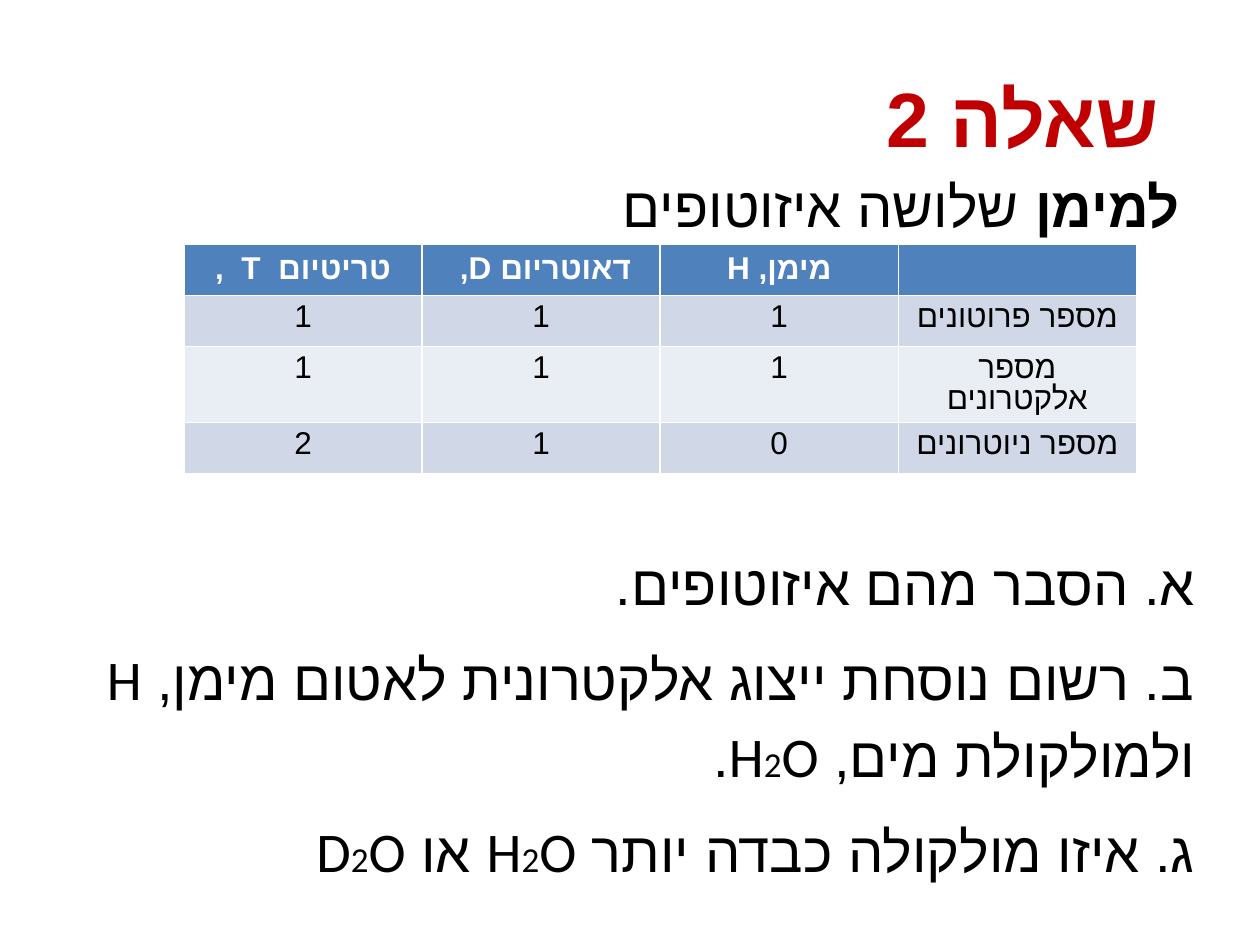
from dataclasses import dataclass

from pptx import Presentation
from pptx.dml.color import RGBColor
from pptx.enum.text import MSO_ANCHOR, MSO_AUTO_SIZE, PP_ALIGN
from pptx.oxml.ns import qn
from pptx.util import Inches, Pt

# Positions are given in columns and rows of a grid over the slide
UNIT = Inches(0.1)
COLUMNS, ROWS = 100, 75


@dataclass(frozen=True)
class Theme:
    text_font: str = "Calibri"
    hebrew_font: str = "Arial"
    title_color: str = "C00000"
    text_color: str = "000000"
    header_text: str = "FFFFFF"
    header_fill: str = "4F81BD"
    band_fills: tuple = ("D0D8E8", "E9EDF4")
    title_size: int = 44
    body_size: int = 32
    subscript_size: int = 20
    table_size: int = 18


THEME = Theme()

ISOTOPES = [
    ["טריטיום  T  ,", "דאוטריום D, ", "מימן, H", ""],
    ["1", "1", "1", "מספר פרוטונים"],
    ["1", "1", "1", "מספר אלקטרונים"],
    ["2", "1", "0", "מספר ניוטרונים"],
]

# Each question is a list of spans; a span "2" is a small formula index
QUESTIONS = [
    ["א. הסבר מהם איזוטופים. "],
    ["ב. רשום נוסחת ייצוג אלקטרונית לאטום מימן, H ולמולקולת מים, H", "2", "O."],
    ["ג. איזו מולקולה כבדה יותר H", "2", "O או D", "2", "O"],
]


def grid(*lengths):
    return [round(length * UNIT) for length in lengths]


def place(box, left, top, width, height):
    box.left, box.top, box.width, box.height = grid(left, top, width, height)


def add_span(para, text, *, size, color=THEME.text_color, bold=False,
             font=THEME.text_font):
    span = para.add_run()
    span.text = text
    span.font.size = Pt(size)
    span.font.bold = bold
    span.font.name = font
    span.font.color.rgb = RGBColor.from_string(color)
    # Hebrew letters take the complex-script font
    complex_font = span.font._element.makeelement(
        qn("a:cs"), {"typeface": THEME.hebrew_font})
    span.font._element.append(complex_font)


def set_right_to_left(para, align):
    para.alignment = align
    para._p.get_or_add_pPr().set("rtl", "1")


def add_body_para(frame, first=False, space_before=0):
    para = frame.paragraphs[0] if first else frame.add_paragraph()
    set_right_to_left(para, PP_ALIGN.RIGHT)
    para.line_spacing = 1.15
    para.space_before = Pt(space_before)
    para.space_after = Pt(10)
    properties = para._p.get_or_add_pPr()
    properties.set("marL", "0")
    properties.append(properties.makeelement(qn("a:buNone"), {}))
    return para


def fill_title(box):
    place(box, 67.3, 3, 27.7, 12.5)
    box.text_frame.vertical_anchor = MSO_ANCHOR.MIDDLE
    para = box.text_frame.paragraphs[0]
    set_right_to_left(para, PP_ALIGN.CENTER)
    add_span(para, "שאלה 2", size=THEME.title_size,
             color=THEME.title_color, bold=True)


def fill_body(box):
    place(box, 5.9, 12.3, 90, 62.7)
    frame = box.text_frame
    frame.auto_size = MSO_AUTO_SIZE.NONE
    intro = add_body_para(frame, first=True)
    add_span(intro, " ", size=THEME.body_size)
    add_span(intro, "למימן ", size=THEME.body_size, bold=True)
    add_span(intro, "שלושה איזוטופים", size=THEME.body_size)
    for number, spans in enumerate(QUESTIONS):
        # The first question leaves room for the table
        para = add_body_para(frame, space_before=0 if number else 162)
        for text in spans:
            size = THEME.subscript_size if text == "2" else THEME.body_size
            add_span(para, text, size=size)


def add_isotope_table(page):
    table = page.shapes.add_table(
        len(ISOTOPES), len(ISOTOPES[0]), *grid(14.6, 19.4, 75.6, 16.2)).table
    for row, texts in enumerate(ISOTOPES):
        header = row == 0
        fill = THEME.header_fill if header else THEME.band_fills[(row - 1) % 2]
        for column, text in enumerate(texts):
            cell = table.cell(row, column)
            cell.fill.solid()
            cell.fill.fore_color.rgb = RGBColor.from_string(fill)
            para = cell.text_frame.paragraphs[0]
            set_right_to_left(para, PP_ALIGN.CENTER)
            para.line_spacing = 1.0 if header else 0.9
            if text:
                add_span(para, text, size=THEME.table_size, bold=header,
                         font=THEME.hebrew_font,
                         color=THEME.header_text if header else THEME.text_color)


def main():
    deck = Presentation()
    deck.slide_width, deck.slide_height = grid(COLUMNS, ROWS)
    page = deck.slides.add_slide(deck.slide_layouts[1])
    fill_title(page.shapes.title)
    fill_body(page.placeholders[1])
    add_isotope_table(page)
    deck.save("out.pptx")


if __name__ == "__main__":
    main()
